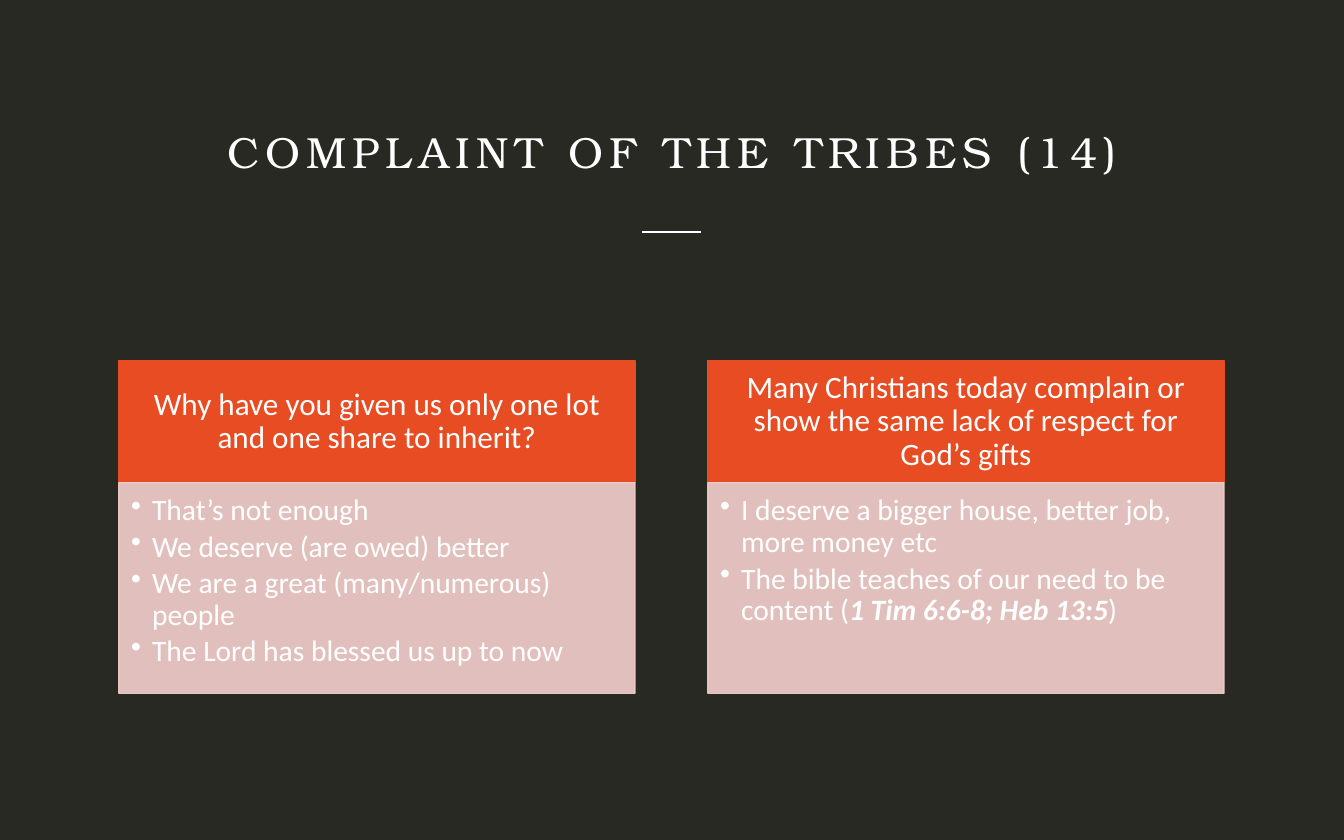
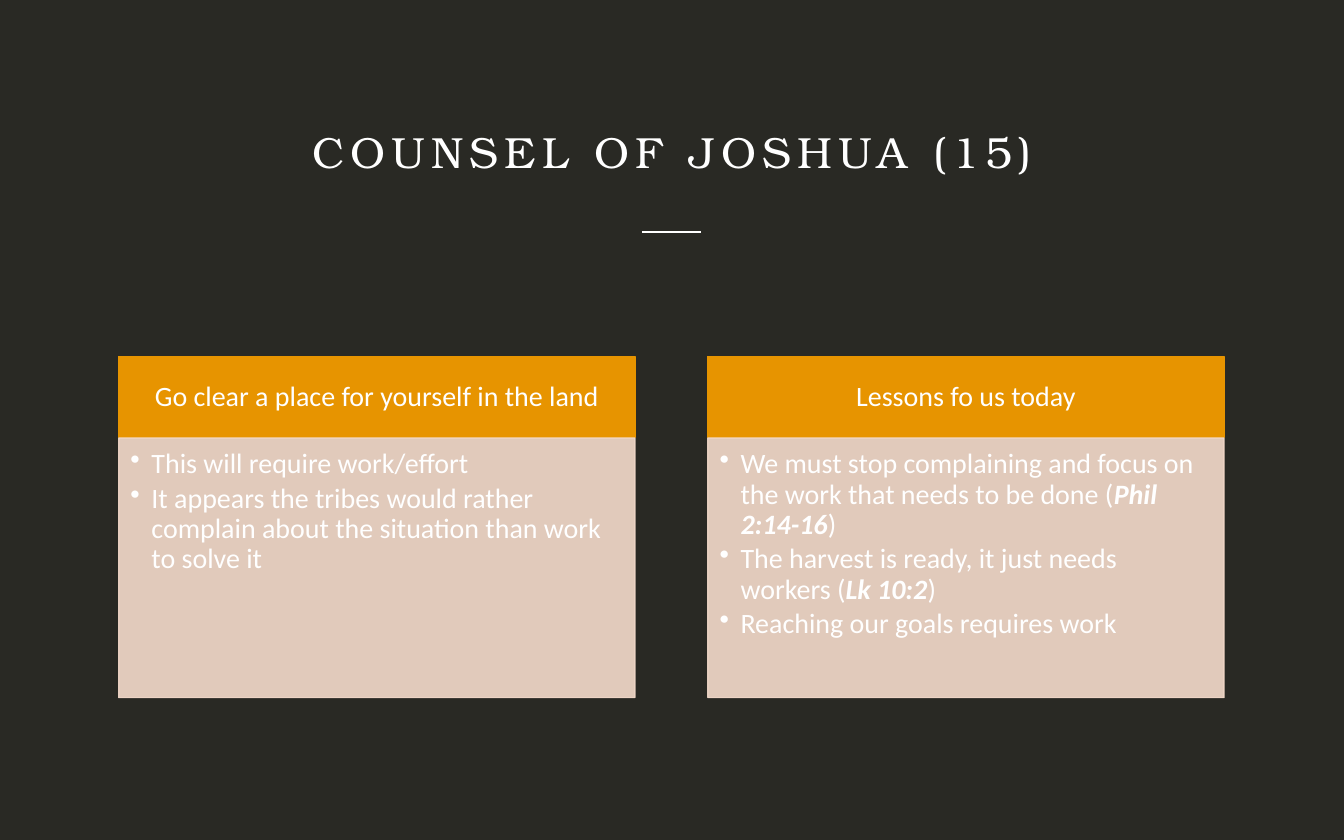
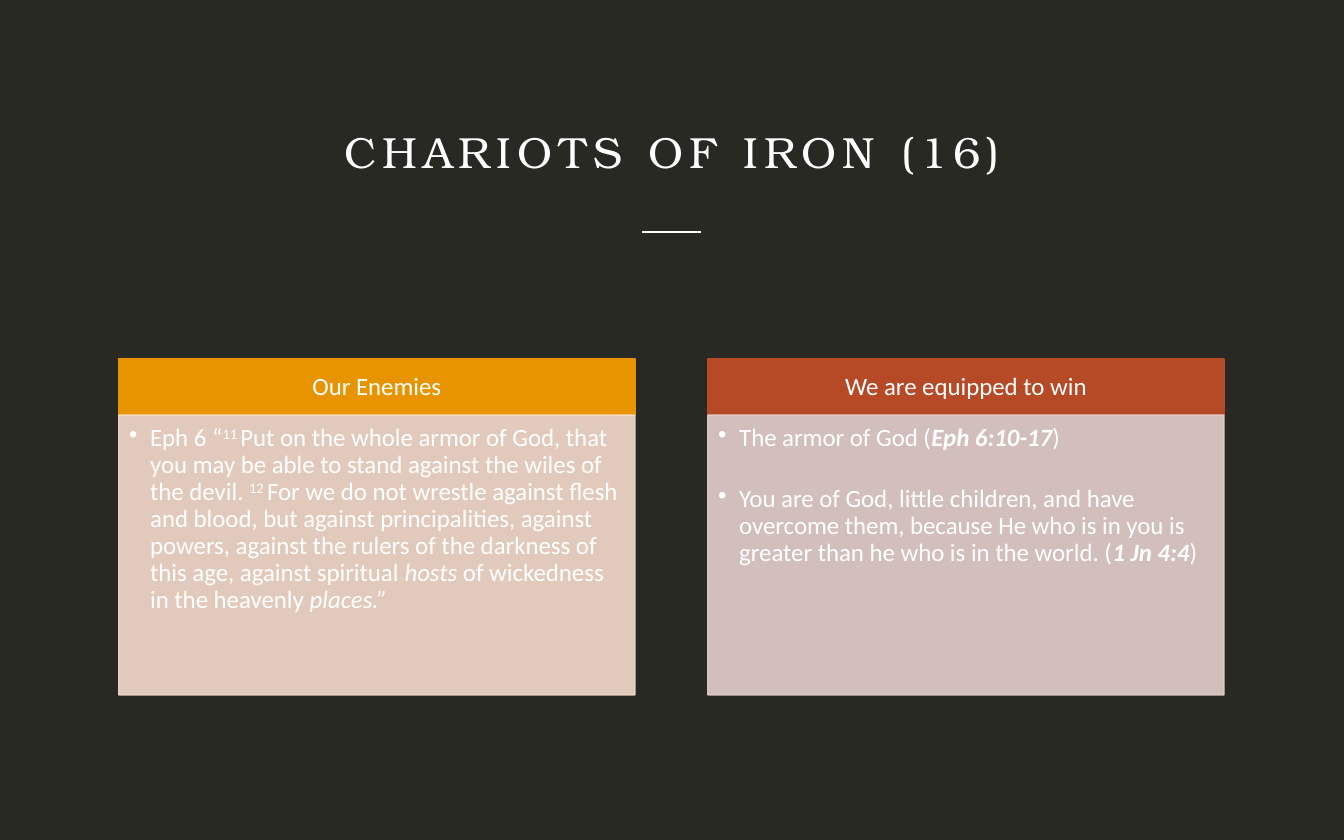
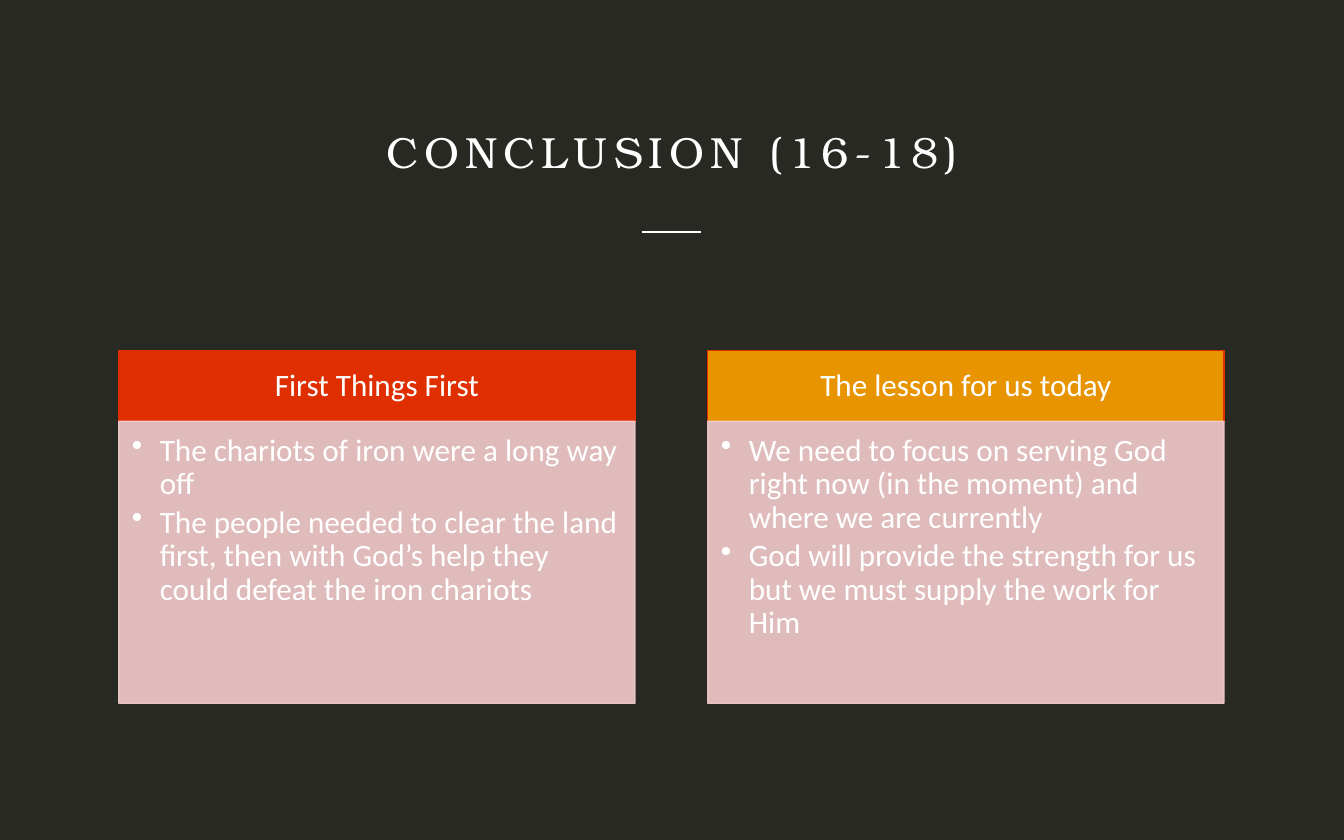
from dataclasses import dataclass

from lxml import etree
from pptx import Presentation
from pptx import util as u
from pptx.dml.color import RGBColor
from pptx.enum import shapes, text
from pptx.oxml import ns


@dataclass(frozen=True)
class Theme:
    background: str = "292924"
    white: str = "FFFFFF"
    flame: str = "E84C22"
    amber: str = "E79400"
    rust: str = "B64926"
    red: str = "DF2F00"
    flame_tint: str = "F6D0CD"
    amber_tint: str = "F6DCCC"
    rust_tint: str = "E5D0CD"
    red_tint: str = "F3CDCC"
    title_font: str = "TeX Gyre Bonum"
    body_font: str = "Calibri"
    title_size: int = 28
    title_spacing: int = 4
    tint_alpha: int = 90


THEME = Theme()
CARD_LEFT, CARD_STEP, CARD_WIDTH = 76.3, 378.7, 331.9
CARDS_MIDDLE = 338.8


def style_run(r, font, size, bold=False, italic=False, superscript=False):
    r.font.name = font
    r.font.size = u.Pt(size)
    r.font.color.rgb = RGBColor.from_string(THEME.white)
    if bold:
        r.font.bold = True
    if italic:
        r.font.italic = True
    if superscript:
        r._r.get_or_add_rPr().set("baseline", "30000")


def set_insets(tf, left, top, right, bottom):
    tf.margin_left, tf.margin_top = u.Pt(left), u.Pt(top)
    tf.margin_right, tf.margin_bottom = u.Pt(right), u.Pt(bottom)


def set_alpha(sp, percent):
    for color in sp._element.spPr.iter(ns.qn("a:srgbClr")):
        etree.SubElement(color, ns.qn("a:alpha")).set("val", str(percent * 1000))


def add_title(s, title):
    sp = s.shapes.add_textbox(u.Pt(77), u.Pt(41.8), u.Pt(710.6), u.Pt(72))
    tf = sp.text_frame
    tf.word_wrap = True
    tf.vertical_anchor = text.MSO_ANCHOR.BOTTOM
    set_insets(tf, 0, 0, 0, 0)
    tf.text = title
    p = tf.paragraphs[0]
    p.alignment = text.PP_ALIGN.CENTER
    r = p.runs[0]
    style_run(r, THEME.title_font, THEME.title_size)
    r._r.get_or_add_rPr().set("spc", str(THEME.title_spacing * 100))


def add_rule(s):
    y = u.Pt(149)
    line = s.shapes.add_connector(
        shapes.MSO_CONNECTOR.STRAIGHT, u.Pt(412.6), y, u.Pt(450.7), y)
    line.line.color.rgb = RGBColor.from_string(THEME.white)
    line.line.width = u.Pt(1)
    etree.SubElement(line._element.spPr, ns.qn("a:effectLst"))


def add_box(s, left, top, height, fill, outline):
    sp = s.shapes.add_shape(
        shapes.MSO_SHAPE.RECTANGLE, u.Pt(left), u.Pt(top), u.Pt(CARD_WIDTH), u.Pt(height))
    sp.fill.solid()
    sp.fill.fore_color.rgb = RGBColor.from_string(fill)
    sp.line.color.rgb = RGBColor.from_string(outline)
    sp.line.width = u.Pt(0.75)
    sp.shadow.inherit = False
    sp.text_frame.word_wrap = True
    return sp


def add_heading(s, left, top, height, heading, size, fill, outline):
    tf = add_box(s, left, top, height, fill, outline).text_frame
    tf.vertical_anchor = text.MSO_ANCHOR.MIDDLE
    set_insets(tf, size * 0.56, size * 0.32, size * 0.56, size * 0.32)
    tf.text = heading
    p = tf.paragraphs[0]
    p.alignment = text.PP_ALIGN.CENTER
    p.line_spacing = 0.9
    style_run(p.runs[0], THEME.body_font, size)


def add_bullet(p, item, size, indent, gap):
    p.level = 1
    p.alignment = text.PP_ALIGN.LEFT
    p.line_spacing = 0.9
    p.space_after = u.Pt(gap)
    pPr = p._p.get_or_add_pPr()
    pPr.set("marL", str(u.Pt(indent)))
    pPr.set("indent", str(-u.Pt(indent)))
    etree.SubElement(pPr, ns.qn("a:buChar")).set("char", "•")
    for part in [item] if isinstance(item, str) else item:
        words, style = (part, {}) if isinstance(part, str) else part
        r = p.add_run()
        r.text = words
        style_run(r, THEME.body_font, size, **style)


def add_bullets(s, left, top, height, items, size, fill, indent, gap):
    sp = add_box(s, left, top, height, fill, fill)
    set_alpha(sp, THEME.tint_alpha)
    tf = sp.text_frame
    tf.vertical_anchor = text.MSO_ANCHOR.TOP
    set_insets(tf, size * 0.42, size * 0.42, size * 0.56, size * 0.63)
    for i, item in enumerate(items):
        p = tf.add_paragraph() if i else tf.paragraphs[0]
        add_bullet(p, item, size, indent, gap)


def add_slide(prs, title, cards, head_height, body_height, head_size, body_size, indent=13.5):
    s = prs.slides.add_slide(prs.slide_layouts[6])
    s.background.fill.solid()
    s.background.fill.fore_color.rgb = RGBColor.from_string(THEME.background)
    add_title(s, title)
    add_rule(s)
    top = CARDS_MIDDLE - (head_height + body_height) / 2
    for i, card in enumerate(cards):
        left = CARD_LEFT + i * CARD_STEP
        add_heading(s, left, top, head_height, card["heading"], head_size,
                    card["fill"], card.get("outline", card["fill"]))
        add_bullets(s, left, top + head_height, body_height, card["items"], body_size,
                    card["tint"], indent, card.get("gap", body_size * 0.15))


def verse(words):
    return words, {"bold": True, "italic": True}


def italic(words):
    return words, {"italic": True}


def superscript(words):
    return words, {"superscript": True}


def main():
    prs = Presentation()
    prs.slide_width, prs.slide_height = u.Pt(864), u.Pt(540)

    flame = {"fill": THEME.flame, "tint": THEME.flame_tint}
    amber = {"fill": THEME.amber, "tint": THEME.amber_tint}
    rust = {"fill": THEME.rust, "tint": THEME.rust_tint}
    red = {"fill": THEME.red, "tint": THEME.red_tint}

    add_slide(prs, "COMPLAINT OF THE TRIBES (14)", [
        {**flame,
         "heading": "Why have you given us only one lot and one share to inherit?",
         "items": ["That’s not enough",
                   "We deserve (are owed) better",
                   "We are a great (many/numerous) people",
                   "The Lord has blessed us up to now"]},
        {**flame,
         "heading": "Many Christians today complain or show the same lack of respect "
                    "for God’s gifts",
         "items": ["I deserve a bigger house, better job, more money etc",
                   ["The bible teaches of our need to be content (",
                    verse("1 Tim 6:6-8; Heb 13:5"), ")"]]},
    ], head_height=78.5, body_height=135.4, head_size=20, body_size=19)

    add_slide(prs, "COUNSEL OF JOSHUA (15)", [
        {**amber,
         "heading": "Go clear a place for yourself in the land",
         "items": ["This will require work/effort",
                   "It appears the tribes would rather complain about the situation "
                   "than work to solve it"]},
        {**amber,
         "heading": "Lessons fo us today",
         "items": [["We must stop complaining and focus on the work that needs to be done (",
                    verse("Phil 2:14-16"), ")"],
                   ["The harvest is ready, it just needs workers (", verse("Lk 10:2"), ")"],
                   "Reaching our goals requires work"]},
    ], head_height=52.5, body_height=167, head_size=18, body_size=18)

    add_slide(prs, "CHARIOTS OF IRON (16)", [
        {**amber,
         "heading": "Our Enemies",
         "items": [["Eph 6 “", superscript("11 "),
                    "Put on the whole armor of God, that you may be able to stand against "
                    "the wiles of the devil. ", superscript("12 "),
                    "For we do not wrestle against flesh and blood, but against "
                    "principalities, against powers, against the rulers of the darkness of "
                    "this age, against spiritual ", italic("hosts"),
                    " of wickedness in the heavenly ", italic("places.”")]]},
        {**rust,
         "heading": "We are equipped to win",
         "gap": 22,
         "items": [["The armor of God (", verse("Eph 6:10-17"), ")"],
                   ["You are of God, little children, and have overcome them, because He "
                    "who is in you is greater than he who is in the world. (",
                    verse("1 Jn 4:4"), ")"]]},
    ], head_height=36, body_height=180, head_size=16, body_size=16)

    add_slide(prs, "CONCLUSION (16-18)", [
        {**red,
         "heading": "First Things First",
         "items": ["The chariots of iron were a long way off",
                   "The people needed to clear the land first, then with God’s help they "
                   "could defeat the iron chariots"]},
        {**red,
         "fill": THEME.amber,
         "outline": THEME.red,
         "heading": "The lesson for us today",
         "items": ["We need to focus on serving God right now (in the moment) and where "
                   "we are currently",
                   "God will provide the strength for us but we must supply the work for Him"]},
    ], head_height=45.4, body_height=181.4, head_size=20, body_size=20, indent=18)

    prs.save("out.pptx")


if __name__ == "__main__":
    main()
